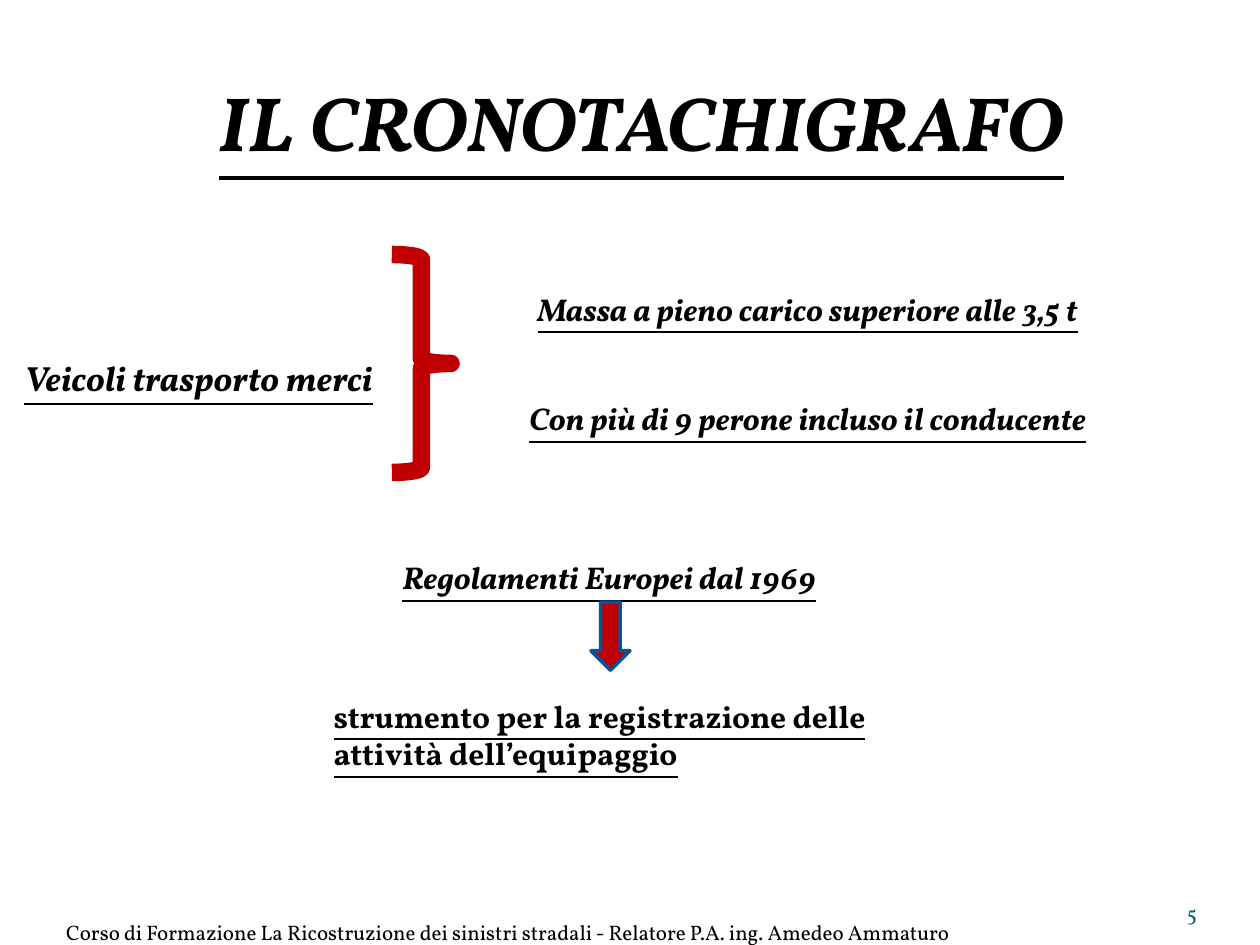
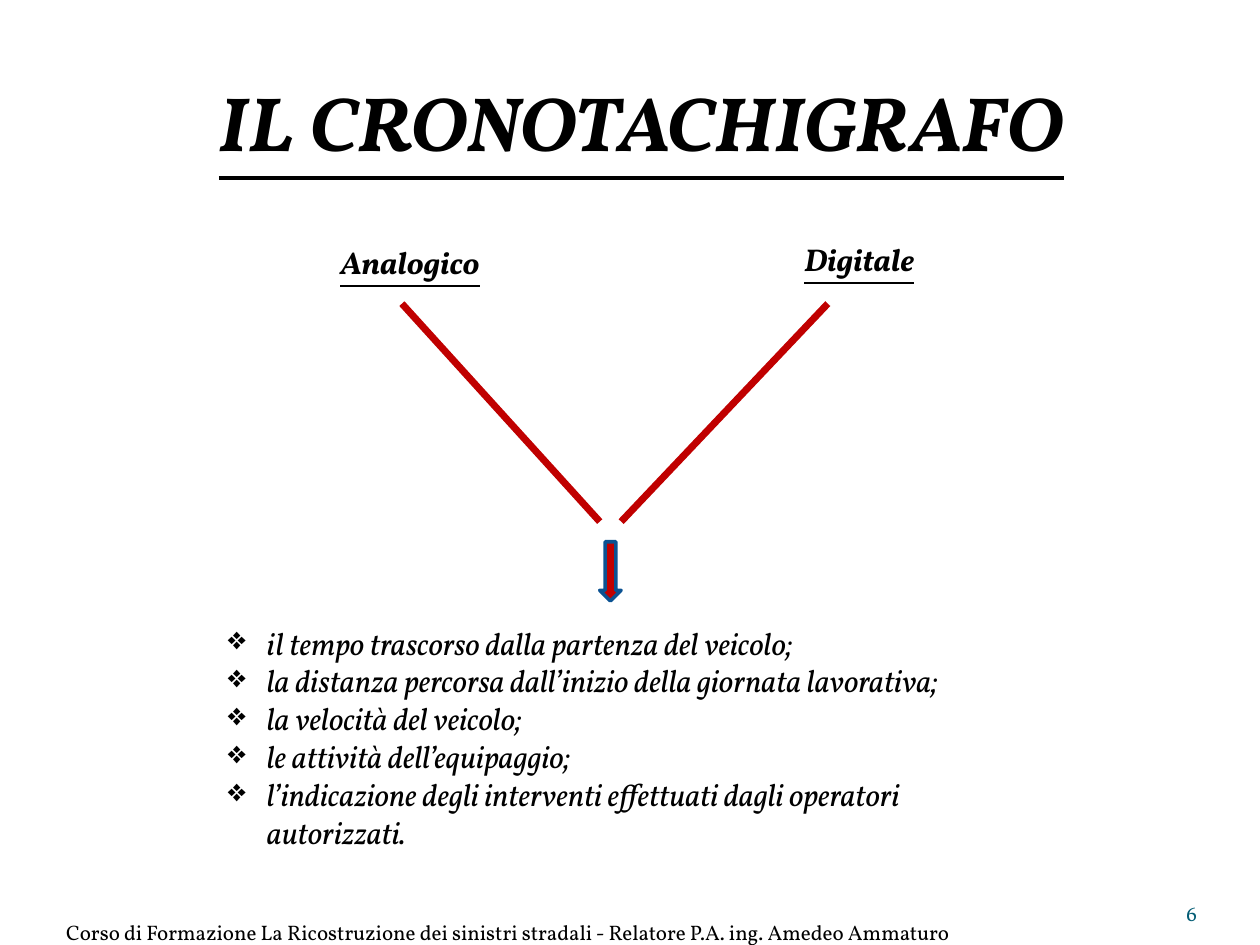
from lxml.etree import SubElement
from pptx import Presentation
from pptx.dml.color import RGBColor
from pptx.enum.shapes import MSO_CONNECTOR, MSO_SHAPE
from pptx.enum.text import MSO_ANCHOR, MSO_AUTO_SIZE, PP_ALIGN
from pptx.oxml.ns import qn
from pptx.util import Inches, Pt

# Shared look
FONT = "Vollkorn"
BLACK, RED, BLUE, TEAL = "000000", "C00000", "0B5292", "045D75"
TITLE = "IL CRONOTACHIGRAFO"
FOOTER = ("Corso di Formazione La Ricostruzione dei sinistri stradali"
          " - Relatore P.A. ing. Amedeo Ammaturo")
HEAD = dict(bold=True, italic=True, under=True, align=PP_ALIGN.CENTER)


def color(code):
    return RGBColor.from_string(code)


def add_bullet(par, char, indent=0.31):
    props = par._p.get_or_add_pPr()
    props.set("marL", str(Inches(indent)))
    props.set("indent", str(-Inches(indent)))
    SubElement(props, qn("a:buChar")).set("char", char)


def write(frame, *lines, size=18, ink=BLACK, bold=False, italic=False,
          under=False, align=PP_ALIGN.LEFT, anchor=MSO_ANCHOR.TOP,
          wrap=True, inset=True, bullet=None):
    """Fill a text frame, one paragraph per line."""
    frame.auto_size = MSO_AUTO_SIZE.NONE
    frame.word_wrap = wrap
    frame.vertical_anchor = anchor
    if not inset:
        frame.margin_left = frame.margin_right = 0
        frame.margin_top = frame.margin_bottom = 0
    for i, line in enumerate(lines):
        par = frame.add_paragraph() if i else frame.paragraphs[0]
        par.alignment = align
        if bullet:
            add_bullet(par, bullet)
        run = par.add_run()
        run.text = line
        font = run.font
        font.name, font.size = FONT, Pt(size)
        font.bold, font.italic, font.underline = bold, italic, under
        font.color.rgb = color(ink)


def add_text(slide, box, *lines, **style):
    shape = slide.shapes.add_textbox(*map(Inches, box))
    write(shape.text_frame, *lines, **style)


def add_label(slide, box, text):
    add_text(slide, box, text, wrap=False, **HEAD)


def add_form(slide, kind, box, line, width, fill=None):
    shape = slide.shapes.add_shape(kind, *map(Inches, box))
    shape.shadow.inherit = False
    if fill:
        shape.fill.solid()
        shape.fill.fore_color.rgb = color(fill)
    else:
        shape.fill.background()
    shape.line.color.rgb = color(line)
    shape.line.width = Pt(width)


def add_arrow(slide, box):
    add_form(slide, MSO_SHAPE.DOWN_ARROW, box, BLUE, 2, fill=RED)


def add_line(slide, start, end):
    line = slide.shapes.add_connector(
        MSO_CONNECTOR.STRAIGHT, *map(Inches, start + end))
    line.line.color.rgb = color(RED)
    line.line.width = Pt(4)
    SubElement(line._element.spPr, qn("a:effectLst"))


def add_slide(deck, number):
    """Start a slide with its title, footer and page number."""
    slide = deck.slides.add_slide(deck.slide_layouts[5])
    title = slide.shapes.title
    title.left, title.top = Inches(0.59), Inches(0.54)
    title.width, title.height = Inches(9), Inches(0.83)
    write(title.text_frame, TITLE, size=44, **HEAD)
    small = dict(size=12, anchor=MSO_ANCHOR.BOTTOM, inset=False)
    add_text(slide, (8.67, 6.95, 0.83, 0.4), str(number),
             ink=TEAL, align=PP_ALIGN.RIGHT, **small)
    add_text(slide, (0, 7.1, 8.07, 0.4), FOOTER,
             align=PP_ALIGN.CENTER, **small)
    return slide


def add_rules(deck):
    slide = add_slide(deck, 5)
    # Vehicles and their two conditions
    add_text(slide, (0, 2.78, 3.15, 0.43), "Veicoli trasporto merci",
             size=20, **HEAD)
    add_form(slide, MSO_SHAPE.RIGHT_BRACE, (3.11, 2.02, 0.47, 1.73), RED, 10)
    add_label(slide, (3.98, 2.25, 4.86, 0.4),
              "Massa a pieno carico superiore alle 3,5 t")
    add_label(slide, (3.9, 3.12, 5.02, 0.4),
              "Con più di 9 perone incluso il conducente")
    # Regulations and purpose
    add_label(slide, (2.99, 4.38, 3.69, 0.4), "Regolamenti Europei dal 1969")
    add_arrow(slide, (4.69, 4.78, 0.31, 0.54))
    add_text(slide, (2.55, 5.48, 5, 0.71),
             "strumento per la registrazione delle attività dell’equipaggio",
             bold=True, under=True)


def add_types(deck):
    slide = add_slide(deck, 6)
    # Two types that lead to the same records
    add_label(slide, (2.56, 1.88, 1.39, 0.4), "Analogico")
    add_label(slide, (6.24, 1.86, 1.16, 0.4), "Digitale")
    add_line(slide, (3.19, 2.41), (4.76, 4.14))
    add_line(slide, (6.57, 2.41), (4.93, 4.14))
    add_arrow(slide, (4.76, 4.3, 0.17, 0.47))
    # Recorded data
    add_text(slide, (1.71, 4.9, 6.59, 1.92),
             "il tempo trascorso dalla partenza del veicolo;",
             "la distanza percorsa dall’inizio della giornata lavorativa;",
             "la velocità del veicolo;",
             "le attività dell’equipaggio;",
             "l’indicazione degli interventi effettuati dagli operatori"
             " autorizzati.",
             italic=True, bullet="❖")


def main():
    deck = Presentation()
    deck.slide_width, deck.slide_height = Inches(10), Inches(7.5)
    add_rules(deck)
    add_types(deck)
    deck.save("out.pptx")


if __name__ == "__main__":
    main()
